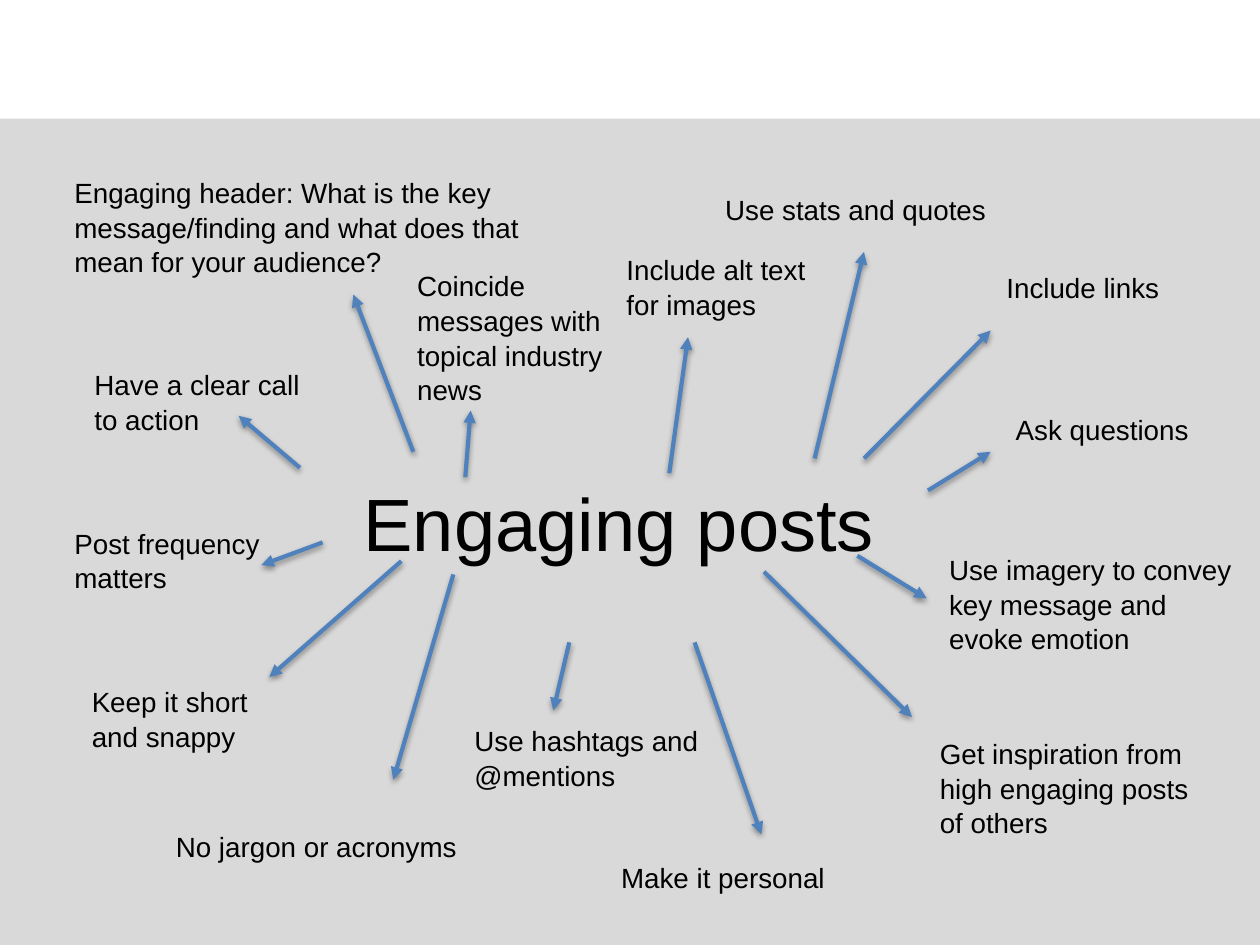
from lxml import etree
from pptx import Presentation
from pptx.dml.color import RGBColor
from pptx.enum.shapes import MSO_CONNECTOR, MSO_SHAPE
from pptx.enum.text import PP_ALIGN
from pptx.oxml.ns import qn
from pptx.util import Inches, Pt

LINE = MSO_CONNECTOR.STRAIGHT
RECT = MSO_SHAPE.RECTANGLE
LEFT, MID = PP_ALIGN.LEFT, PP_ALIGN.CENTER

COLORS = {"panel": "D9D9D9", "text": "000000", "arrow": "4F81BD"}
FONT = "Arial"
STEP = 0.1  # inches per grid column and row
COLS, ROWS = 94.5, 70.9
TOP = 8.9  # first row of the grey panel

# Each tip: text, (column, row, width, lines), arrow start, arrow end
TIPS = [
    ("Engaging header: What is the key message/finding and what does that "
     "mean for your audience?", (4.6, 12.6, 38.4, 3), (31, 33.9), (26.5, 22.1)),
    ("Have a clear call to action",
     (6.1, 27, 18.3, 2), (22.5, 35.1), (17.9, 31.2)),
    ("Post frequency matters",
     (4.6, 38.9, 21.4, 2), (24.2, 40.7), (19.6, 42.4)),
    ("Coincide messages with topical industry news",
     (30.3, 19.6, 20.1, 4), (34.9, 35.8), (35.3, 30.8)),
    ("Use stats and quotes",
     (53.4, 13.9, 26.9, 1), (61.1, 34.4), (64.8, 18.9)),
    ("Include links",
     (74.5, 19.7, 15.6, 1), (64.8, 34.4), (74.3, 24.8)),
    ("Ask questions",
     (75.2, 30.4, 15.6, 1), (69.6, 36.8), (74.3, 33.9)),
    ("Keep it short and snappy",
     (5.9, 50.8, 15.6, 2), (30.1, 42.1), (20.2, 50.8)),
    ("No jargon or acronyms",
     (12.2, 61.7, 26.9, 1), (34, 43.1), (29.5, 58.5)),
    ("Use imagery to convey key message and evoke emotion",
     (70.2, 40.9, 23.3, 3), (64.3, 41.7), (69.5, 44.9)),
    ("Get inspiration from high engaging posts of others",
     (69.5, 54.7, 21.1, 3), (57.3, 42.9), (68.4, 53.8)),
    ("Make it personal",
     (45.6, 64, 26.9, 1), (52.1, 48.2), (57.1, 62.6)),
    ("Use hashtags and @mentions",
     (34.6, 53.7, 26.9, 2), (42.7, 48.2), (41.5, 53.3)),
    ("Include alt text for images",
     (46, 18.4, 16.3, 2), (50.2, 35.5), (51.6, 25.3)),
]


def grid(*cells):
    return [Inches(cell * STEP) for cell in cells]


def tint(name):
    return RGBColor.from_string(COLORS[name])


class Board:
    def __init__(self):
        self.deck = Presentation()
        self.deck.slide_width, self.deck.slide_height = grid(COLS, ROWS)
        self.slide = self.deck.slides.add_slide(self.deck.slide_layouts[6])
        self.shapes = self.slide.shapes

    def shade(self, shape, blur, gap, alpha):
        props = shape._element.spPr
        for old in props.findall(qn("a:effectLst")):
            props.remove(old)
        effects = etree.SubElement(props, qn("a:effectLst"))
        cast = etree.SubElement(
            effects, qn("a:outerShdw"), blurRad=str(Pt(blur)),
            dist=str(Pt(gap)), dir="5400000", rotWithShape="0")
        color = etree.SubElement(cast, qn("a:srgbClr"), val="000000")
        etree.SubElement(color, qn("a:alpha"), val=str(alpha * 1000))

    def panel(self, col, row, wide, high):
        box = self.shapes.add_shape(RECT, *grid(col, row, wide, high))
        box.fill.solid()
        box.fill.fore_color.rgb = tint("panel")
        box.line.fill.background()
        self.shade(box, 0, 1.8, 35)

    def text(self, words, place, size=15, align=LEFT, pad=0.05, lead=1.04):
        frame = self.shapes.add_textbox(*grid(*place)).text_frame
        frame.word_wrap = True
        frame.margin_top = Inches(pad)
        frame.text = words
        para = frame.paragraphs[0]
        para.alignment = align
        para.line_spacing = lead
        font = para.runs[0].font
        font.name, font.size = FONT, Pt(size)
        font.color.rgb = tint("text")

    def arrow(self, start, end):
        link = self.shapes.add_connector(LINE, *grid(*start, *end))
        link.line.color.rgb = tint("arrow")
        link.line.width = Pt(2.25)
        etree.SubElement(link.line._get_or_add_ln(), qn("a:tailEnd"),
                         type="triangle")
        self.shade(link, 3.1, 1.6, 38)

    def tip(self, words, spot, start, end):
        col, row, wide, lines = spot
        self.text(words, (col, row, wide, 1 + 2.53 * lines))
        self.arrow(start, end)


def main():
    board = Board()

    # Background panel
    board.panel(0, TOP, COLS, ROWS - TOP)

    # Central topic
    board.text("Engaging posts", (15, 34.7, 62.8, 10.1), size=40, align=MID,
               pad=0.11, lead=1.0)

    # Tips around the topic
    for tip in TIPS:
        board.tip(*tip)

    board.deck.save("out.pptx")


if __name__ == "__main__":
    main()
